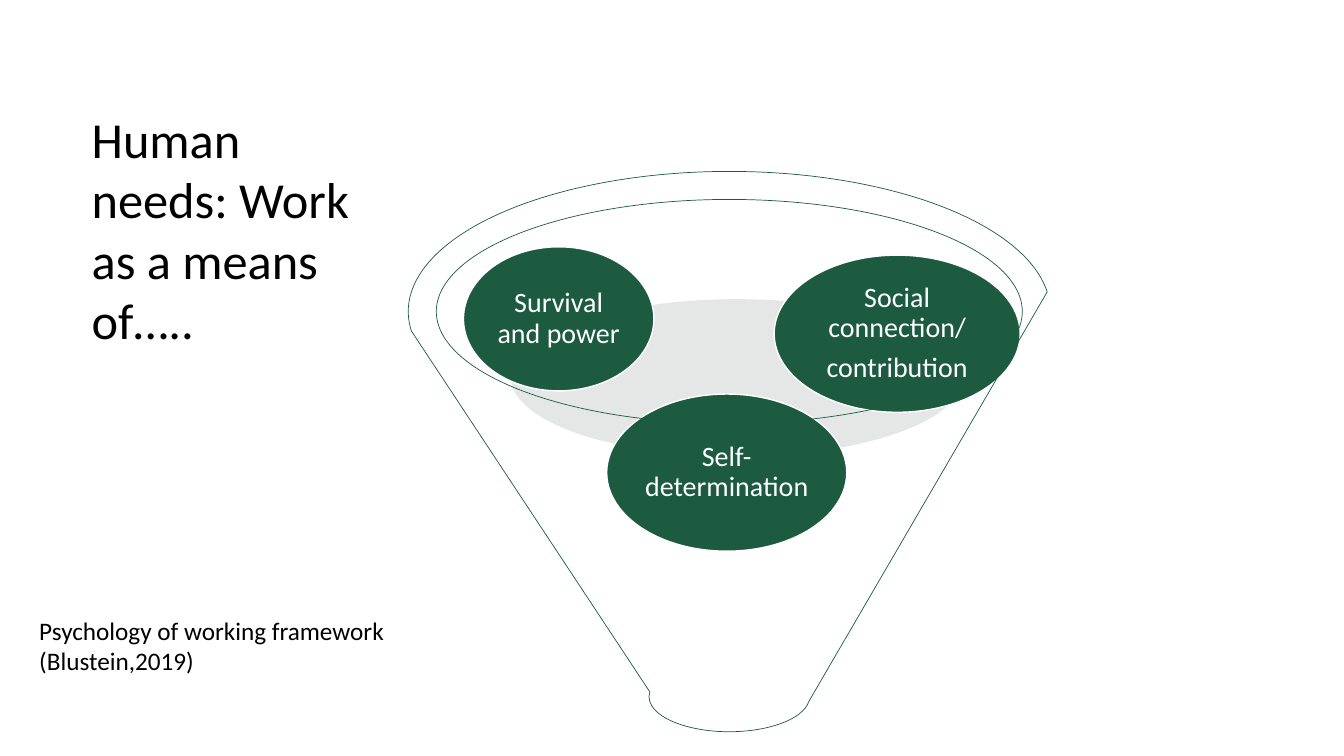
from lxml import etree
from pptx import Presentation
from pptx import util as u
from pptx.dml.color import RGBColor
from pptx.enum import shapes, text
from pptx.oxml import ns

GREEN = RGBColor(0x1D, 0x5B, 0x41)
MIST = RGBColor(0xBD, 0xC4, 0xC0)
WHITE = RGBColor(0xFF, 0xFF, 0xFF)
BLACK = RGBColor(0, 0, 0)


class FunnelSlide:
    font_name = "Calibri"

    def __init__(self, deck):
        self.slide = deck.slides.add_slide(deck.slide_layouts[6])

    def shape(self, kind, box, fill=None, line=None, width=1.0):
        shape = self.slide.shapes.add_shape(kind, *map(u.Cm, box))
        shape.shadow.inherit = False
        if fill is None:
            shape.fill.background()
        else:
            shape.fill.solid()
            shape.fill.fore_color.rgb = fill
        if line is None:
            shape.line.fill.background()
        else:
            shape.line.color.rgb = line
            shape.line.width = u.Pt(width)
        return shape

    def set_words(self, frame, lines, size, color):
        frame.word_wrap = True
        frame.text = "\n".join(lines)
        for paragraph in frame.paragraphs:
            paragraph.font.name = self.font_name
            paragraph.font.size = u.Pt(size)
            paragraph.font.color.rgb = color

    def shade(self, box, opacity):
        oval = self.shape(shapes.MSO_SHAPE.OVAL, box, MIST)
        color = oval.element.spPr.find(".//" + ns.qn("a:srgbClr"))
        etree.SubElement(color, ns.qn("a:alpha"), val=str(opacity * 1000))

    def need(self, box, *lines):
        oval = self.shape(shapes.MSO_SHAPE.OVAL, box, GREEN, WHITE)
        frame = oval.text_frame
        frame.vertical_anchor = text.MSO_ANCHOR.MIDDLE
        frame.margin_left = frame.margin_right = u.Cm(0.08)
        frame.margin_top = frame.margin_bottom = u.Cm(0.08)
        self.set_words(frame, lines, 20, WHITE)
        for paragraph in frame.paragraphs:
            paragraph.alignment = text.PP_ALIGN.CENTER
            paragraph.line_spacing = 0.9
            paragraph.space_after = u.Pt(7)

    def funnel(self, box):
        self.shape(shapes.MSO_SHAPE.FUNNEL, box, line=GREEN, width=0.5)

    def label(self, box, wording, size):
        frame = self.slide.shapes.add_textbox(*map(u.Cm, box)).text_frame
        self.set_words(frame, [wording], size, BLACK)


def main():
    deck = Presentation()
    deck.slide_width, deck.slide_height = u.Cm(33.87), u.Cm(19.05)
    needs = FunnelSlide(deck)
    needs.shade((12.88, 7.54, 11.38, 3.96), opacity=40)
    needs.need((15.29, 9.93, 6.05, 3.96), "Self-determination")
    needs.need((11.68, 6.22, 4.8, 3.63), "Survival and power")
    needs.need((19.51, 6.43, 6.2, 3.96), "Social connection/", "contribution")
    needs.funnel((10.29, 4.32, 16.18, 14.12))
    needs.label((2.06, 2.59, 7.24, 6.4), "Human needs: Work as a means of…..", 36)
    needs.label((0.74, 15.37, 9.47, 1.8),
                "Psychology of working framework (Blustein,2019)", 18)
    deck.save("out.pptx")


if __name__ == "__main__":
    main()
